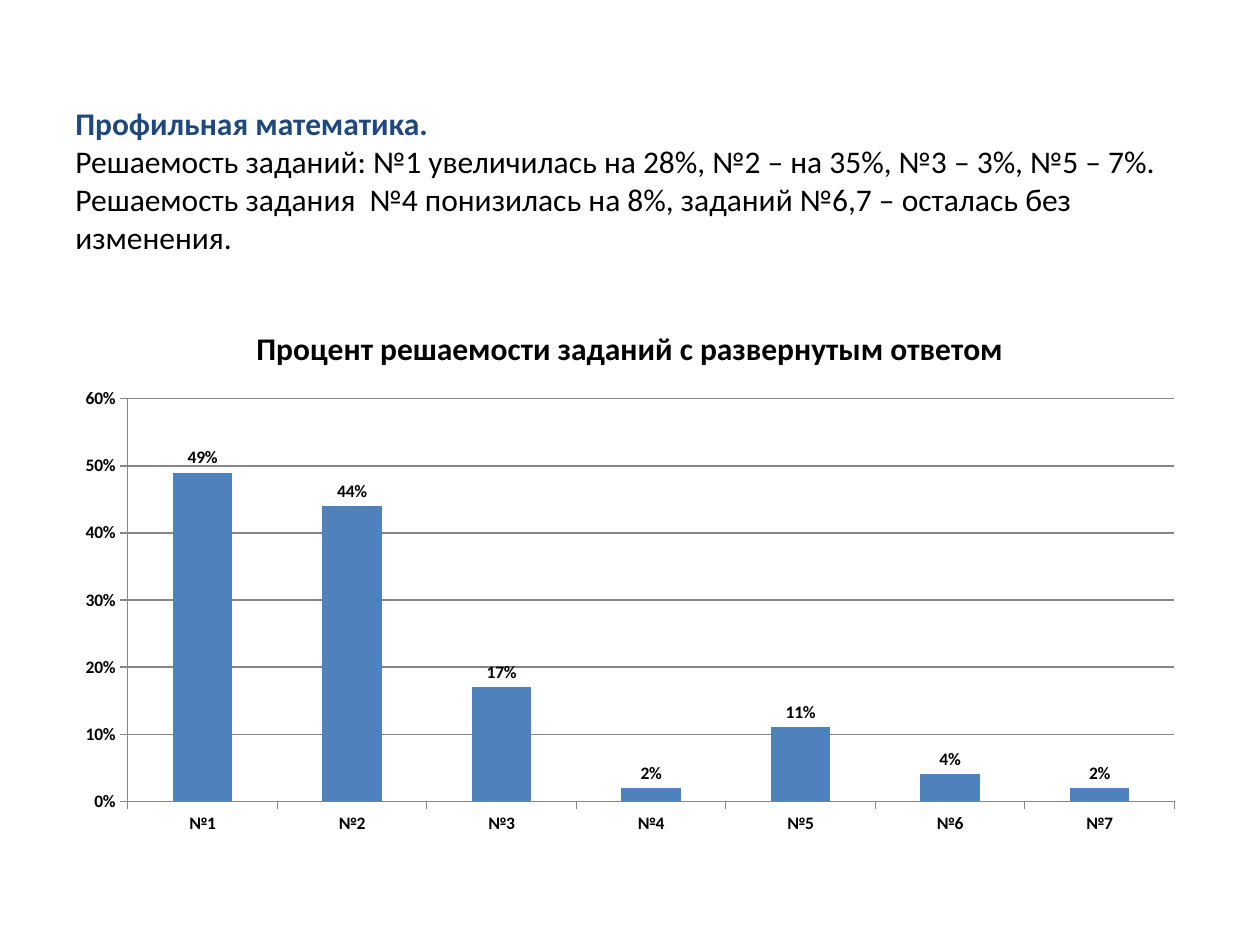
import pptx
import pptx.chart.data
import pptx.dml.color
import pptx.enum.chart
import pptx.enum.text
import pptx.util

Cm = pptx.util.Cm
Pt = pptx.util.Pt
RGBColor = pptx.dml.color.RGBColor

NAVY = RGBColor(0x1F, 0x49, 0x7D)
BLUE = RGBColor(0x4F, 0x81, 0xBD)
GRAY = RGBColor(0x86, 0x86, 0x86)
BLACK = RGBColor(0, 0, 0)
FONT = "Calibri"

HEADING = "Профильная математика."
SUMMARY = (
    "Решаемость заданий: №1 увеличилась на 28%, №2 – на 35%, №3 – 3%, №5 – 7%. "
    "Решаемость задания  №4 понизилась на 8%, заданий №6,7 – осталась без изменения."
)
CHART_TITLE = "Процент решаемости заданий с развернутым ответом"
SOLVED_SHARES = [0.49, 0.44, 0.17, 0.02, 0.11, 0.04, 0.02]


def style_font(font, size, color, bold):
    font.name = FONT
    font.size = Pt(size)
    font.color.rgb = color
    font.bold = bold


def add_summary(slide, left, top, width, height):
    frame = slide.shapes.add_textbox(left, top, width, height).text_frame
    frame.word_wrap = True
    frame.vertical_anchor = pptx.enum.text.MSO_ANCHOR.MIDDLE
    frame.text = f"{HEADING}\n{SUMMARY}"
    heading, summary = frame.paragraphs
    style_font(heading.font, 18, NAVY, True)
    style_font(summary.font, 18, BLACK, False)


def add_solved_chart(slide, left, top, width, height):
    solved = pptx.chart.data.CategoryChartData(number_format="0%")
    solved.categories = [f"№{task}" for task in range(1, len(SOLVED_SHARES) + 1)]
    solved.add_series("Процент решаемости", SOLVED_SHARES)
    chart = slide.shapes.add_chart(
        pptx.enum.chart.XL_CHART_TYPE.COLUMN_CLUSTERED,
        left, top, width, height, solved,
    ).chart
    style_font(chart.font, 10, BLACK, True)
    chart.has_legend = False
    chart.has_title = True
    chart.chart_title.include_in_layout = False
    title_frame = chart.chart_title.text_frame
    title_frame.text = CHART_TITLE
    style_font(title_frame.paragraphs[0].font, 18, BLACK, True)

    columns = chart.plots[0]
    columns.gap_width = 150
    columns.vary_by_categories = False
    fill = columns.series[0].format.fill
    fill.solid()
    fill.fore_color.rgb = BLUE
    columns.has_data_labels = True
    labels = columns.data_labels
    labels.show_value = True
    labels.number_format = "0%"
    labels.number_format_is_linked = False
    labels.position = pptx.enum.chart.XL_LABEL_POSITION.OUTSIDE_END
    style_font(labels.font, 10, BLACK, True)

    shares = chart.value_axis
    shares.minimum_scale = 0
    shares.maximum_scale = 0.6
    shares.major_unit = 0.1
    shares.tick_labels.number_format = "0%"
    shares.tick_labels.number_format_is_linked = False
    shares.has_major_gridlines = True
    shares.major_gridlines.format.line.color.rgb = GRAY
    for axis in (shares, chart.category_axis):
        axis.major_tick_mark = pptx.enum.chart.XL_TICK_MARK.OUTSIDE
        axis.format.line.color.rgb = GRAY
        style_font(axis.tick_labels.font, 10, BLACK, True)


def main():
    deck = pptx.Presentation()
    deck.slide_width = Cm(25.4)
    deck.slide_height = Cm(19.05)
    slide = deck.slides.add_slide(deck.slide_layouts[6])
    margin = Cm(1.27)
    content_width = deck.slide_width - 2 * margin
    add_summary(slide, margin, Cm(1.93), content_width, Cm(3.4))
    add_solved_chart(slide, margin, Cm(6.12), content_width, Cm(10.9))
    deck.save("out.pptx")


if __name__ == "__main__":
    main()
